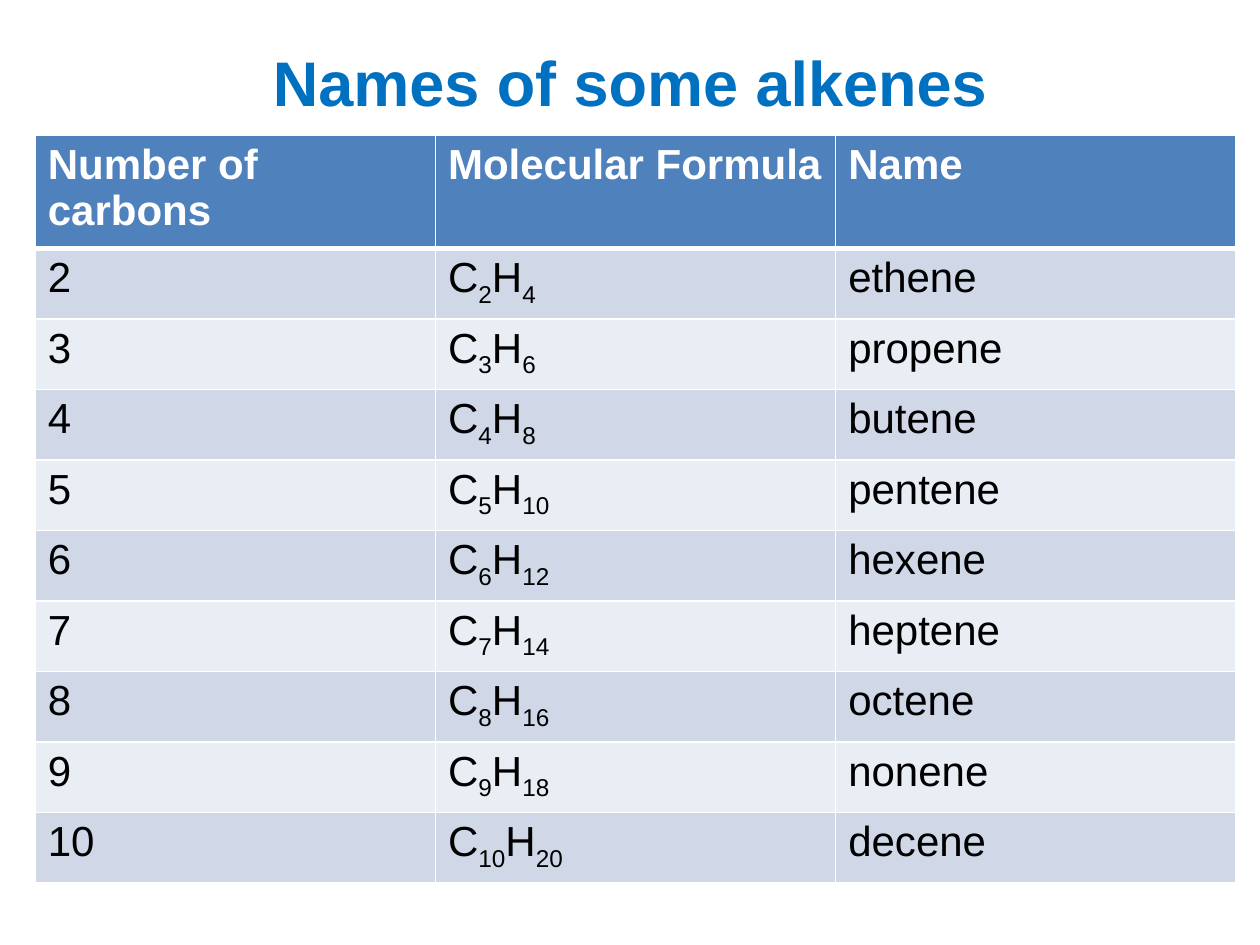
from lxml.etree import SubElement
from pptx import Presentation
from pptx.dml.color import RGBColor
from pptx.enum.text import MSO_ANCHOR, PP_ALIGN
from pptx.oxml.ns import qn
from pptx.util import Inches, Pt

COLORS = {
    "title": "0070C0",
    "header": "4F81BD",
    "band_dark": "D0D8E8",
    "band_light": "E9EDF4",
    "white": "FFFFFF",
    "black": "000000",
}
FONT = "Arial"
HEADINGS = ["Number of carbons", "Molecular Formula", "Name"]
ALKENES = ["ethene", "propene", "butene", "pentene", "hexene",
           "heptene", "octene", "nonene", "decene"]


def rgb(name):
    return RGBColor.from_string(COLORS[name])


def add_run(p, text, size, color, bold=False, subscript=False):
    r = p.add_run()
    r.text = text
    r.font.name, r.font.size, r.font.bold = FONT, Pt(size), bold
    r.font.color.rgb = rgb(color)
    if subscript:
        r._r.get_or_add_rPr().set("baseline", "-25000")


def set_borders(cell, top, bottom):
    """White cell borders; top and bottom widths in points."""
    tc_pr = cell._tc.get_or_add_tcPr()
    for side, width in (("L", 1), ("R", 1), ("T", top), ("B", bottom)):
        ln = SubElement(tc_pr, qn(f"a:ln{side}"), w=str(Pt(width)))
        fill = SubElement(ln, qn("a:solidFill"))
        SubElement(fill, qn("a:srgbClr"), val=COLORS["white"])


def add_title(slide, left, top, width, height):
    tf = slide.shapes.add_textbox(left, top, width, height).text_frame
    tf.word_wrap = True
    tf.vertical_anchor = MSO_ANCHOR.MIDDLE
    p = tf.paragraphs[0]
    p.alignment = PP_ALIGN.CENTER
    add_run(p, "Names of some alkenes", 36, "title", bold=True)


def fill_cell(cell, row, parts):
    """Write text parts into a cell; every second part is a subscript."""
    header = row == 0
    set_borders(cell, top=3 if row == 1 else 1, bottom=3 if header else 1)
    band = "header" if header else "band_dark" if row % 2 else "band_light"
    cell.fill.solid()
    cell.fill.fore_color.rgb = rgb(band)
    for i, text in enumerate(parts):
        add_run(cell.text_frame.paragraphs[0], text, 24,
                "white" if header else "black", header, subscript=i % 2 == 1)


def add_alkene_table(slide, left, top, width, row_height):
    # An alkene with n carbons has 2n hydrogens
    rows = [[[heading] for heading in HEADINGS]]
    for n, name in enumerate(ALKENES, start=2):
        rows.append([[str(n)], ["C", str(n), "H", str(2 * n)], [name]])

    table = slide.shapes.add_table(len(rows), len(HEADINGS), left, top,
                                   width, row_height * len(rows)).table
    for i, row in enumerate(rows):
        table.rows[i].height = row_height
        for j, parts in enumerate(row):
            fill_cell(table.cell(i, j), i, parts)


def main():
    prs = Presentation()
    prs.slide_width, prs.slide_height = Inches(10), Inches(7.5)
    slide = prs.slides.add_slide(prs.slide_layouts[6])
    add_title(slide, 0, Inches(0.13), prs.slide_width, Inches(1.03))
    add_alkene_table(slide, Inches(0.28), Inches(1.07), Inches(9.53), Inches(0.56))
    prs.save("out.pptx")


if __name__ == "__main__":
    main()
